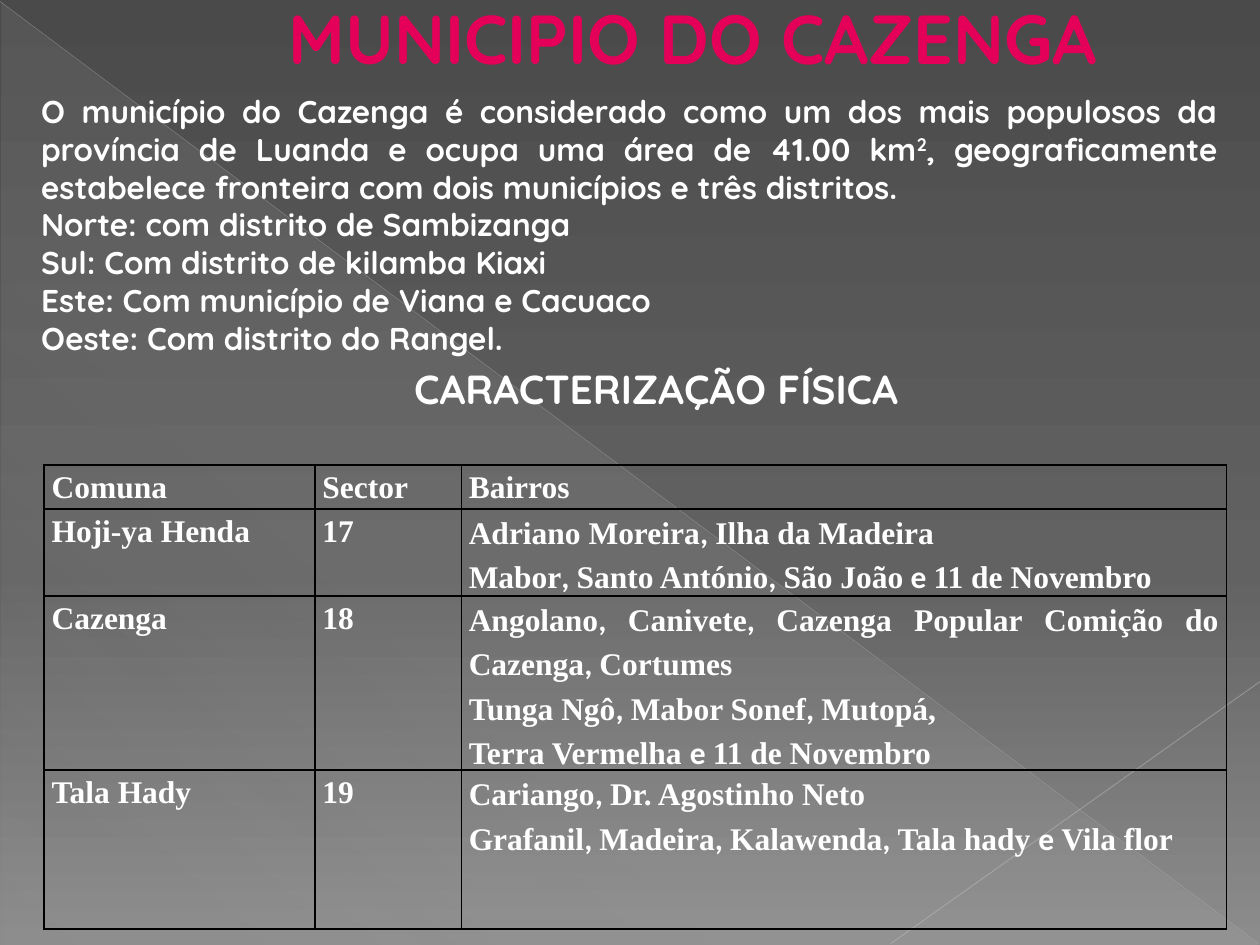
"""Build the slide on the municipality of Cazenga with its table of communes."""
import pptx
import pptx.dml.color
import pptx.enum.shapes
import pptx.enum.text
import pptx.oxml
import pptx.oxml.ns
import pptx.util
from lxml import etree

Cm = pptx.util.Cm
Pt = pptx.util.Pt
qn = pptx.oxml.ns.qn
RGBColor = pptx.dml.color.RGBColor
ALIGN = pptx.enum.text.PP_ALIGN

COLORS = {
    "top": "4A4A4A", "middle": "626262", "bottom": "8C8C8C",
    "sheen": "D2D2D2", "diagonal": "BFBFBF", "corner": "C6C6C6",
    "title": "E40059", "outline": "B12761", "text": "FFFFFF", "border": "000000",
}


def add_run(paragraph, text, font_name, size, color="text"):
    """Add a bold run and return it."""
    run = paragraph.add_run()
    run.text = text
    for name, value in {"name": font_name, "size": Pt(size), "bold": True}.items():
        setattr(run.font, name, value)
    run.font.color.rgb = RGBColor.from_string(COLORS[color])
    return run


def set_gradient(fill, element, angle, stops):
    """Fill with stops of position, color and opacity, all in percent."""
    fill.gradient()
    fill.gradient_angle = angle
    stop_list = element.xpath(".//a:gsLst")[0]
    for stop in list(stop_list):
        stop_list.remove(stop)
    for position, color, opacity in stops:
        stop = etree.SubElement(stop_list, qn("a:gs"), pos=str(position * 1000))
        rgb = etree.SubElement(stop, qn("a:srgbClr"), val=COLORS[color])
        etree.SubElement(rgb, qn("a:alpha"), val=str(opacity * 1000))


presentation = pptx.Presentation()
presentation.slide_width = Cm(25.4)
presentation.slide_height = Cm(19.05)
slide = presentation.slides.add_slide(presentation.slide_layouts[5])
set_gradient(slide.background.fill, slide.element, 270,
             [(0, "top", 100), (60, "middle", 100), (100, "bottom", 100)])

triangle = slide.shapes.add_shape(
    pptx.enum.shapes.MSO_SHAPE.RIGHT_TRIANGLE, Cm(0.03), Cm(0.05), Cm(25.35), Cm(19))
triangle.shadow.inherit = False
triangle.line.fill.background()
set_gradient(triangle.fill, triangle.element, 227,
             [(0, "sheen", 10), (70, "sheen", 8), (100, "sheen", 1)])

for start_x, start_y, end_x, end_y, color, width, opacity in [
    (0, 0.03, 25.37, 19.02, "diagonal", 0.39, 35),
    (25.4, 13.74, 17.96, 19.02, "corner", 0.47, 45),
]:
    connector = slide.shapes.add_connector(
        pptx.enum.shapes.MSO_CONNECTOR.STRAIGHT,
        Cm(start_x), Cm(start_y), Cm(end_x), Cm(end_y))
    connector.line.width = Pt(width)
    connector.line.color.rgb = RGBColor.from_string(COLORS[color])
    rgb = connector.element.xpath(".//a:ln//a:srgbClr")[0]
    etree.SubElement(rgb, qn("a:alpha"), val=str(opacity * 1000))
    etree.SubElement(connector.element.spPr, qn("a:effectLst"))

title = slide.shapes.title
title.element.getparent().append(title.element)
for name, value in {"left": 2.54, "top": -0.1, "width": 22.86, "height": 1.75}.items():
    setattr(title, name, Cm(value))
for name, value in {
    "margin_top": 0, "margin_bottom": 0, "word_wrap": True,
    "auto_size": pptx.enum.text.MSO_AUTO_SIZE.NONE,
    "vertical_anchor": pptx.enum.text.MSO_ANCHOR.TOP,
}.items():
    setattr(title.text_frame, name, value)
paragraph = title.text_frame.paragraphs[0]
paragraph.alignment = ALIGN.CENTER
run = add_run(paragraph, "MUNICIPIO DO CAZENGA", "Quicksand", 39.6, "title")
outline = pptx.oxml.parse_xml(
    f'<a:ln {pptx.oxml.ns.nsdecls("a")} w="6350"><a:solidFill>'
    f'<a:srgbClr val="{COLORS["outline"]}"/></a:solidFill></a:ln>')
run.font._element.insert(0, outline)

description = slide.shapes.add_textbox(Cm(0.58), Cm(1.73), Cm(24.21), Cm(7.34)).text_frame
description.word_wrap = True
paragraph = description.paragraphs[0]
paragraph.alignment = ALIGN.JUSTIFY
add_run(paragraph, "O município do Cazenga é considerado como um dos mais populosos da "
        "província de Luanda e ocupa uma área de 41.00 km", "Quicksand", 18)
square = add_run(paragraph, "2", "Quicksand", 18)
square.font._element.set("baseline", "30000")
add_run(paragraph, ", geograficamente estabelece fronteira com dois municípios e três distritos.",
        "Quicksand", 18)
for border_text in [
    "Norte: com distrito de Sambizanga",
    "Sul: Com distrito de kilamba Kiaxi",
    "Este: Com município de Viana e Cacuaco",
    "Oeste: Com distrito do Rangel.",
]:
    paragraph = description.add_paragraph()
    paragraph.alignment = ALIGN.JUSTIFY
    add_run(paragraph, border_text, "Quicksand", 18)
heading = description.add_paragraph()
heading.space_before = Pt(4)
heading.alignment = ALIGN.LEFT
heading._p.get_or_add_pPr().set("marL", str(Cm(7.52)))
add_run(heading, "CARACTERIZAÇÃO FÍSICA", "Quicksand", 23.2)

rows = [
    ("Comuna", "Sector", ["Bairros"]),
    ("Hoji-ya Henda", "17", [
        "Adriano Moreira|, |Ilha da Madeira",
        "Mabor|, |Santo António|, |São João| e |11 de Novembro"]),
    ("Cazenga", "18", [
        "Angolano|, |Canivete|, |Cazenga Popular Comição do Cazenga|, |Cortumes",
        "Tunga Ngô|, |Mabor Sonef|, |Mutopá,",
        "Terra Vermelha |e |11 de Novembro"]),
    ("Tala Hady", "19", [
        "Cariango|, |Dr. Agostinho Neto",
        "Grafanil|, |Madeira|, |Kalawenda|, |Tala hady |e |Vila flor"]),
]
column_widths = [5.46, 2.95, 15.42]
row_heights = [0.89, 1.75, 3.51, 3.2]
table = slide.shapes.add_table(
    len(rows), len(column_widths), Cm(0.89), Cm(9.37),
    Cm(sum(column_widths)), Cm(sum(row_heights))).table
table.first_row = False
table.horz_banding = False
for column, width in zip(table.columns, column_widths):
    column.width = Cm(width)
cell_format = {"margin_left": Cm(0.15), "margin_right": Cm(0.15),
               "margin_top": 0, "margin_bottom": 0}
for row, height, (commune, sector, districts) in zip(table.rows, row_heights, rows):
    row.height = Cm(height)
    for cell, lines in zip(row.cells, [[commune], [sector], districts]):
        for name, value in cell_format.items():
            setattr(cell, name, value)
        cell.fill.background()
        for index, side in enumerate(["lnL", "lnR", "lnT", "lnB"]):
            border = pptx.oxml.parse_xml(
                f'<a:{side} {pptx.oxml.ns.nsdecls("a")} w="12700"><a:solidFill>'
                f'<a:srgbClr val="{COLORS["border"]}"/></a:solidFill></a:{side}>')
            cell._tc.get_or_add_tcPr().insert(index, border)
        for index, line in enumerate(lines):
            frame = cell.text_frame
            paragraph = frame.add_paragraph() if index else frame.paragraphs[0]
            paragraph.alignment = ALIGN.JUSTIFY
            paragraph.line_spacing = 1.15
            for position, text in enumerate(line.split("|")):
                add_run(paragraph, text, "Calibri" if position % 2 else "Times New Roman", 18)

presentation.save("out.pptx")
